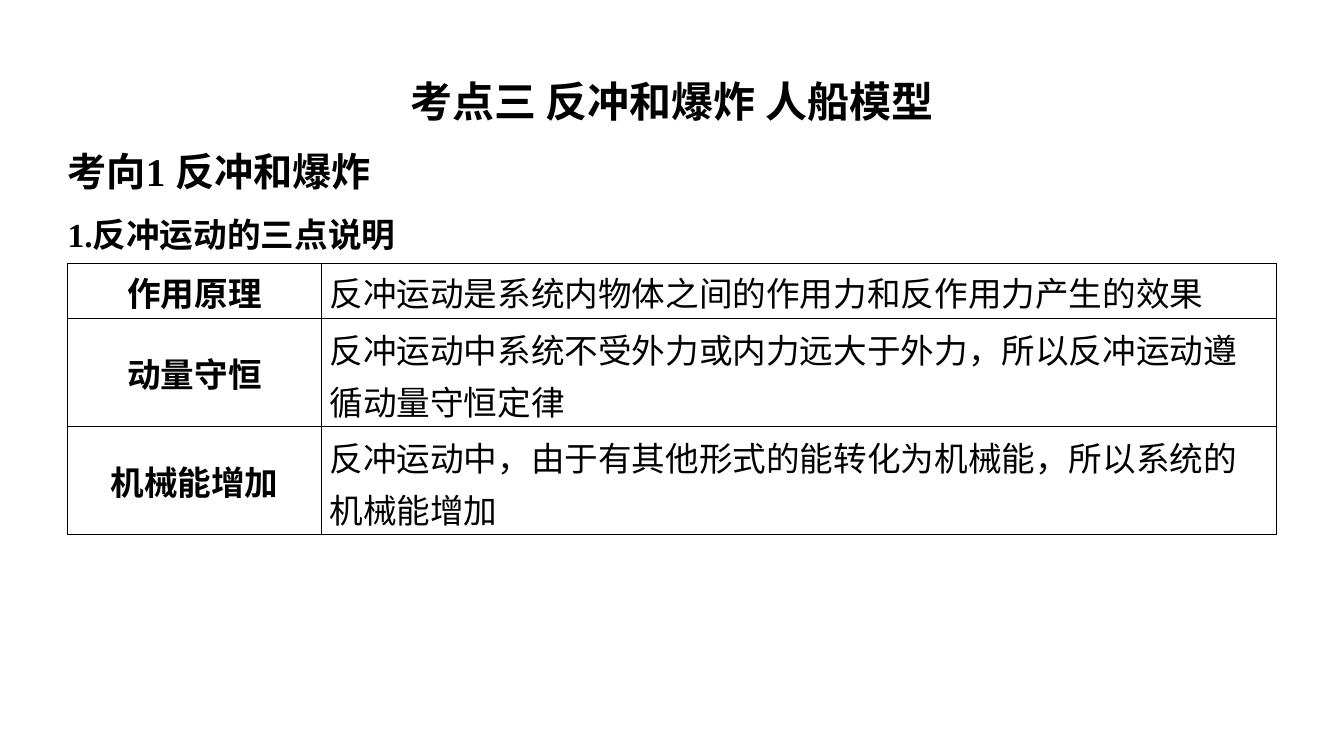
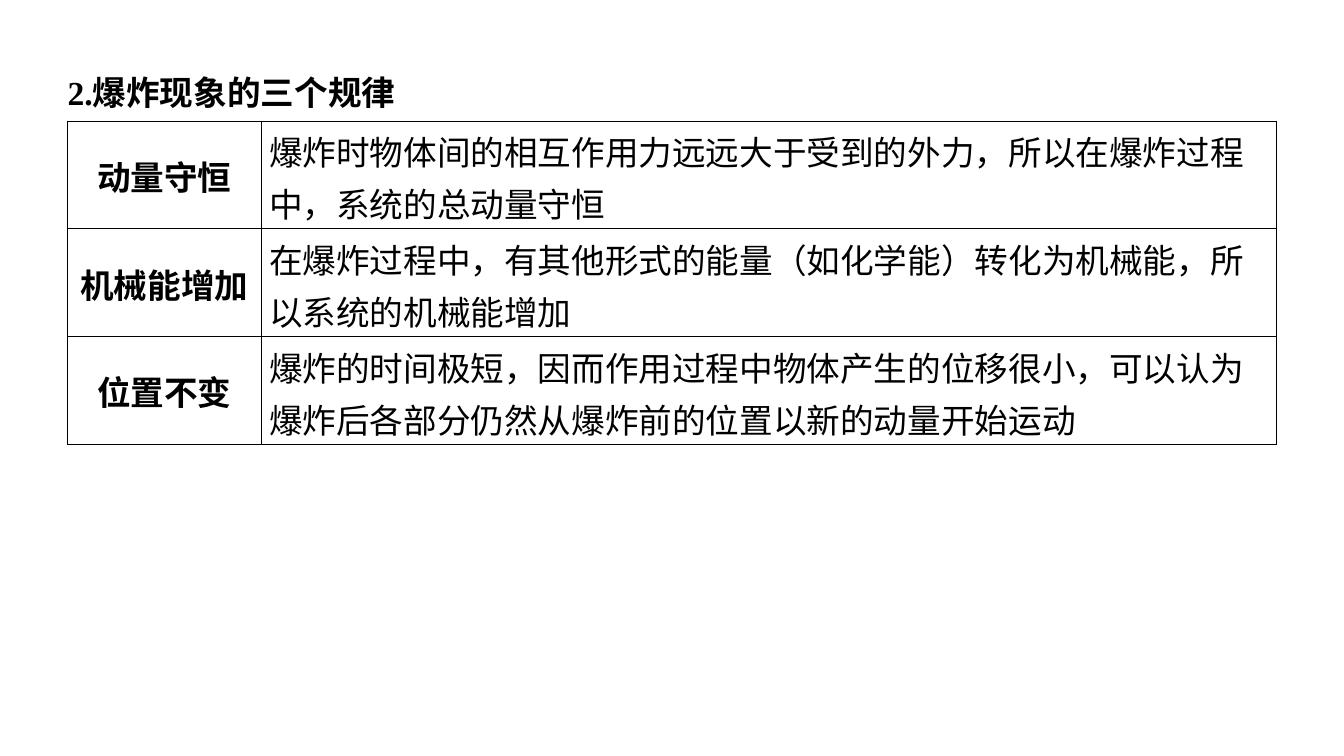
import pptx
import pptx.dml.color
import pptx.enum.text
import pptx.oxml
import pptx.oxml.ns
import pptx.util

Inches, Pt = pptx.util.Inches, pptx.util.Pt
ALIGN = pptx.enum.text.PP_ALIGN

COLORS = {"ink": "000000", "paper": "FFFFFF"}
FONT = "Times New Roman"
SLIDE_W, SLIDE_H = 13.33, 7.5
MARGIN = 0.67
BODY_W = SLIDE_W - 2 * MARGIN
TOP = 0.53
BODY_SIZE = 24
LINE_H = 0.52  # height of one line of body text
BORDER_PT = 0.75
# heading level: size, line spacing, alignment
HEADINGS = {
    "topic": (30, 52, ALIGN.CENTER),
    "aspect": (28, 49, ALIGN.LEFT),
    "section": (BODY_SIZE, 42, ALIGN.LEFT),
}

RECOIL_ROWS = [
    ("作用原理", ["反冲运动是系统内物体之间的作用力和反作用力产生的效果"]),
    ("动量守恒", ["反冲运动中系统不受外力或内力远大于外力，所以反冲运动遵",
              "循动量守恒定律"]),
    ("机械能增加", ["反冲运动中，由于有其他形式的能转化为机械能，所以系统的",
               "机械能增加"]),
]
EXPLOSION_ROWS = [
    ("动量守恒", ["爆炸时物体间的相互作用力远远大于受到的外力，所以在爆炸过程",
              "中，系统的总动量守恒"]),
    ("机械能增加", ["在爆炸过程中，有其他形式的能量（如化学能）转化为机械能，所",
               "以系统的机械能增加"]),
    ("位置不变", ["爆炸的时间极短，因而作用过程中物体产生的位移很小，可以认为",
              "爆炸后各部分仍然从爆炸前的位置以新的动量开始运动"]),
]


def write(paragraph, text, size, spacing, align=ALIGN.LEFT, bold=False):
    paragraph.alignment = align
    paragraph.line_spacing = Pt(spacing)
    run = paragraph.add_run()
    run.text = text
    run.font.name = FONT
    run.font.size = Pt(size)
    run.font.bold = bold
    run.font.color.rgb = pptx.dml.color.RGBColor.from_string(COLORS["ink"])


def add_heading(slide, level, text, top, height):
    """A heading across the body width."""
    size, spacing, align = HEADINGS[level]
    box = slide.shapes.add_textbox(Inches(MARGIN), Inches(top),
                                   Inches(BODY_W), Inches(height))
    frame = box.text_frame
    frame.word_wrap = True
    frame.margin_left = frame.margin_right = 0
    frame.margin_top = frame.margin_bottom = 0
    write(frame.paragraphs[0], text, size, spacing, align, bold=True)


def style_cell(cell):
    """Clear cell with a thin line on all four sides."""
    cell.vertical_anchor = pptx.enum.text.MSO_ANCHOR.MIDDLE
    cell.margin_left = cell.margin_right = Inches(0.08)
    cell.margin_top = cell.margin_bottom = 0
    cell.fill.background()
    properties = cell._tc.get_or_add_tcPr()
    for index, side in enumerate("LRTB"):
        properties.insert(index, pptx.oxml.parse_xml(
            f'<a:ln{side} {pptx.oxml.ns.nsdecls("a")} w="{Pt(BORDER_PT)}">'
            f'<a:solidFill><a:srgbClr val="{COLORS["ink"]}"/></a:solidFill>'
            f'</a:ln{side}>'))


def add_rule_table(slide, rows, top, label_share):
    """Bold labels on the left, explanations on the right."""
    heights = [0.03 + LINE_H * len(lines) for _, lines in rows]
    table = slide.shapes.add_table(
        len(rows), 2, Inches(MARGIN), Inches(top),
        Inches(BODY_W), Inches(sum(heights))).table
    table.first_row = table.horz_banding = False
    for column, share in zip(table.columns, (label_share, 1 - label_share)):
        column.width = Inches(BODY_W * share)

    for index, (label, lines) in enumerate(rows):
        table.rows[index].height = Inches(heights[index])
        label_cell, text_cell = table.cell(index, 0), table.cell(index, 1)
        style_cell(label_cell)
        style_cell(text_cell)
        write(label_cell.text_frame.paragraphs[0], label, BODY_SIZE, 36,
              ALIGN.CENTER, bold=True)
        frame = text_cell.text_frame
        for number, line in enumerate(lines):
            paragraph = frame.add_paragraph() if number else frame.paragraphs[0]
            last = number == len(lines) - 1
            write(paragraph, line, BODY_SIZE, 37 if last else 38)


def add_section(slide, title, rows, top, label_share):
    """Section heading with its table below."""
    add_heading(slide, "section", title, top, LINE_H)
    add_rule_table(slide, rows, top + 0.67, label_share)


def new_slide(deck):
    slide = deck.slides.add_slide(deck.slide_layouts[6])
    fill = slide.background.fill
    fill.solid()
    fill.fore_color.rgb = pptx.dml.color.RGBColor.from_string(COLORS["paper"])
    return slide


def main():
    deck = pptx.Presentation()
    deck.slide_width, deck.slide_height = Inches(SLIDE_W), Inches(SLIDE_H)

    # Recoil
    recoil = new_slide(deck)
    add_heading(recoil, "topic", "考点三 反冲和爆炸 人船模型", TOP, 0.72)
    add_heading(recoil, "aspect", "考向1 反冲和爆炸", 1.25, 0.69)
    add_section(recoil, "1.反冲运动的三点说明", RECOIL_ROWS, 1.94, 0.21)

    # Explosion
    explosion = new_slide(deck)
    add_section(explosion, "2.爆炸现象的三个规律", EXPLOSION_ROWS, TOP, 0.16)

    deck.save("out.pptx")


if __name__ == "__main__":
    main()
